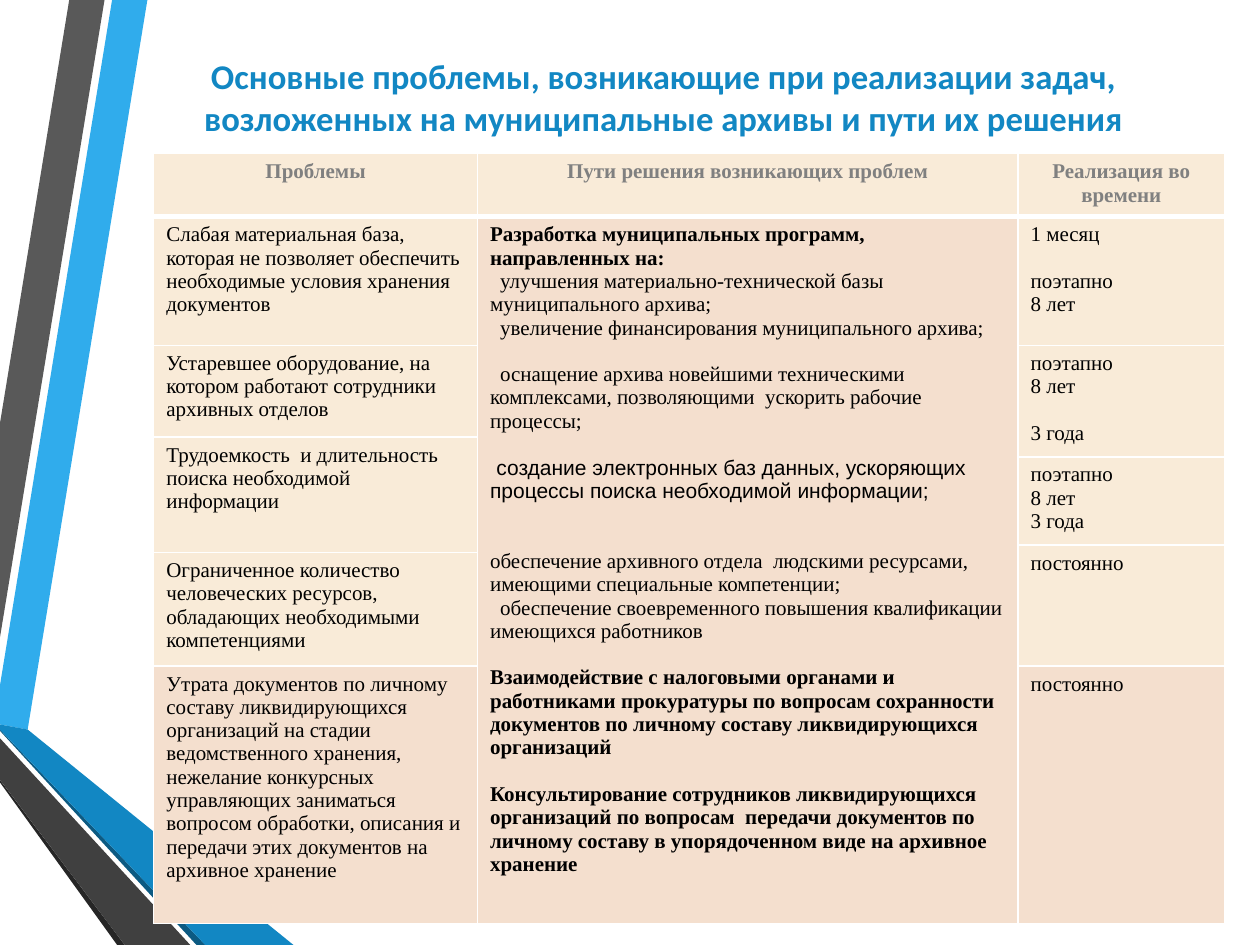
from dataclasses import dataclass
from typing import NamedTuple

from lxml.etree import SubElement as Sub
from pptx import Presentation
from pptx.dml.color import RGBColor as Rgb
from pptx.enum.text import MSO_ANCHOR as Anchor, PP_ALIGN as Align
from pptx.oxml.ns import qn
from pptx.util import Emu, Pt

UNIT = 9144  # one grid step: the slide is 1000 columns by 750 rows
WIDE, HIGH = 1000, 750


@dataclass(frozen=True)
class Theme:
    blue: str = "1287C3"
    sky: str = "30ACEC"
    navy: str = "0C5A82"
    coal: str = "262626"
    dark: str = "404040"
    grey: str = "595959"
    mute: str = "808080"
    ink: str = "000000"
    white: str = "FFFFFF"
    cream: str = "F9EBD8"
    peach: str = "F4DFCE"
    head: str = "Calibri"
    serif: str = "Times New Roman"
    sans: str = "Arial"
    big: float = 19.8
    small: float = 12
    line: float = 13.3  # height of one table line
    thin: float = 1
    thick: float = 3


T = Theme()


class Band(NamedTuple):
    color: str
    dots: list[tuple[int, int]]


class Para(NamedTuple):
    text: str
    gap: int = 0  # empty lines above
    dent: int = 0  # first-line indent in grid steps
    bold: bool = False
    font: str = T.serif


class Block(NamedTuple):
    row: int
    col: int
    paras: list[Para]
    span: int = 1
    fill: str = T.cream


BANDS = [
    Band(T.sky, [(0, 544), (0, 575), (22, 579), (117, 0), (89, 0)]),
    Band(T.grey, [(83, 0), (55, 0), (0, 336), (0, 506)]),
    Band(T.coal, [(0, 619), (0, 621), (93, 750), (99, 750)]),
    Band(T.navy, [(0, 579), (0, 580), (156, 750), (163, 750)]),
    Band(T.blue, [(0, 579), (163, 750), (233, 750), (22, 579), (0, 575)]),
    Band(T.dark, [(0, 619), (99, 750), (151, 750), (0, 586)]),
]

TITLE = ("Основные проблемы, возникающие при реализации задач, "
         "возложенных на муниципальные архивы и пути их решения")
COLS = [257, 429, 164]
ROWS = [46, 102, 73, 12, 65, 6, 90, 188]
HEADS = ["Проблемы", "Пути решения возникающих проблем", "Реализация во времени"]

STEPS = [
    Para("Разработка муниципальных программ, направленных на:", bold=True),
    Para("улучшения материально-технической базы муниципального архива;", dent=8),
    Para("увеличение финансирования муниципального архива;", dent=8),
    Para("оснащение архива новейшими техническими комплексами, "
         "позволяющими  ускорить рабочие процессы;", 1, 8),
    Para("создание электронных баз данных, ускоряющих процессы поиска "
         "необходимой информации;", 1, 5, font=T.sans),
    Para("обеспечение архивного отдела  людскими ресурсами, "
         "имеющими специальные компетенции;", 2),
    Para("обеспечение своевременного повышения квалификации "
         "имеющихся работников", dent=8),
    Para("Взаимодействие с налоговыми органами и работниками прокуратуры "
         "по вопросам сохранности документов по личному составу "
         "ликвидирующихся организаций", 1, bold=True),
    Para("Консультирование сотрудников ликвидирующихся организаций по вопросам  "
         "передачи документов по личному составу в упорядоченном виде "
         "на архивное хранение", 1, bold=True),
]

BLOCKS = [
    # Problems
    Block(1, 0, [Para("Слабая материальная база, которая не позволяет обеспечить "
                      "необходимые условия хранения документов")]),
    Block(2, 0, [Para("Устаревшее оборудование, на котором работают сотрудники "
                      "архивных отделов")]),
    Block(3, 0, [Para("Трудоемкость  и длительность поиска необходимой "
                      "информации")], 3),
    Block(6, 0, [Para("Ограниченное количество человеческих ресурсов, обладающих "
                      "необходимыми компетенциями")]),
    Block(7, 0, [Para("Утрата документов по личному составу ликвидирующихся "
                      "организаций на стадии ведомственного хранения, нежелание "
                      "конкурсных управляющих заниматься вопросом обработки, "
                      "описания и передачи этих документов на архивное "
                      "хранение")], fill=T.peach),
    # Solutions
    Block(1, 1, STEPS, 7, T.peach),
    # Timing
    Block(1, 2, [Para("1 месяц"), Para("поэтапно", 1), Para("8 лет")]),
    Block(2, 2, [Para("поэтапно"), Para("8 лет"), Para("3 года", 1)], 2),
    Block(4, 2, [Para("поэтапно"), Para("8 лет"), Para("3 года")]),
    Block(5, 2, [Para("постоянно")], 2),
    Block(7, 2, [Para("постоянно")], fill=T.peach),
]


def grid(*steps: int) -> list[Emu]:
    return [Emu(step * UNIT) for step in steps]


def style(para, font: str, size: float, color: str, bold: bool) -> None:
    for run in para.runs:
        run.font.name, run.font.size, run.font.bold = font, Pt(size), bold
        run.font.color.rgb = Rgb.from_string(color)


def draw_band(slide, band: Band) -> None:
    path = slide.shapes.build_freeform(*band.dots[0], scale=UNIT)
    path.add_line_segments(band.dots[1:], close=True)
    shape = path.convert_to_shape()
    shape.shadow.inherit = False
    shape.fill.solid()
    shape.fill.fore_color.rgb = Rgb.from_string(band.color)
    shape.line.fill.background()


def draw_title(slide) -> None:
    frame = slide.shapes.add_textbox(*grid(106, 36, 841, 81)).text_frame
    frame.word_wrap, frame.vertical_anchor = True, Anchor.MIDDLE
    frame.text = TITLE
    para = frame.paragraphs[0]
    para.alignment = Align.CENTER
    style(para, T.head, T.big, T.blue, True)


def paint(cell, fill: str, row: int) -> None:
    props = cell._tc.get_or_add_tcPr()
    for side in "LRTB":
        wide = (row, side) in ((0, "B"), (1, "T"))
        edge = Sub(props, qn(f"a:ln{side}"), w=str(Pt(T.thick if wide else T.thin)))
        Sub(Sub(edge, qn("a:solidFill")), qn("a:srgbClr"), val=T.white)
    cell.fill.solid()
    cell.fill.fore_color.rgb = Rgb.from_string(fill)


def draw_block(table, block: Block) -> None:
    cell = table.cell(block.row, block.col)
    if block.span > 1:
        cell.merge(table.cell(block.row + block.span - 1, block.col))
    paint(cell, block.fill, block.row)
    head = block.row == 0
    cell.text_frame.text = "\n".join(item.text for item in block.paras)
    for para, item in zip(cell.text_frame.paragraphs, block.paras):
        para.alignment = Align.CENTER if head else Align.LEFT
        para.space_before = Pt(item.gap * T.line)
        para._p.get_or_add_pPr().set("indent", str(item.dent * UNIT))
        style(para, item.font, T.small, T.mute if head else T.ink, item.bold)


def draw_table(slide) -> None:
    place = grid(122, 122, sum(COLS), sum(ROWS))
    table = slide.shapes.add_table(len(ROWS), len(COLS), *place).table
    table.first_row = table.horz_banding = False
    for col, width in zip(table.columns, grid(*COLS)):
        col.width = width
    for row, height in zip(table.rows, grid(*ROWS)):
        row.height = height
    heads = [Block(0, col, [Para(text, bold=True)]) for col, text in enumerate(HEADS)]
    for block in heads + BLOCKS:
        draw_block(table, block)


def main() -> None:
    deck = Presentation()
    deck.slide_width, deck.slide_height = grid(WIDE, HIGH)
    slide = deck.slides.add_slide(deck.slide_layouts[6])
    for band in BANDS:
        draw_band(slide, band)
    draw_title(slide)
    draw_table(slide)
    deck.save("out.pptx")


if __name__ == "__main__":
    main()
